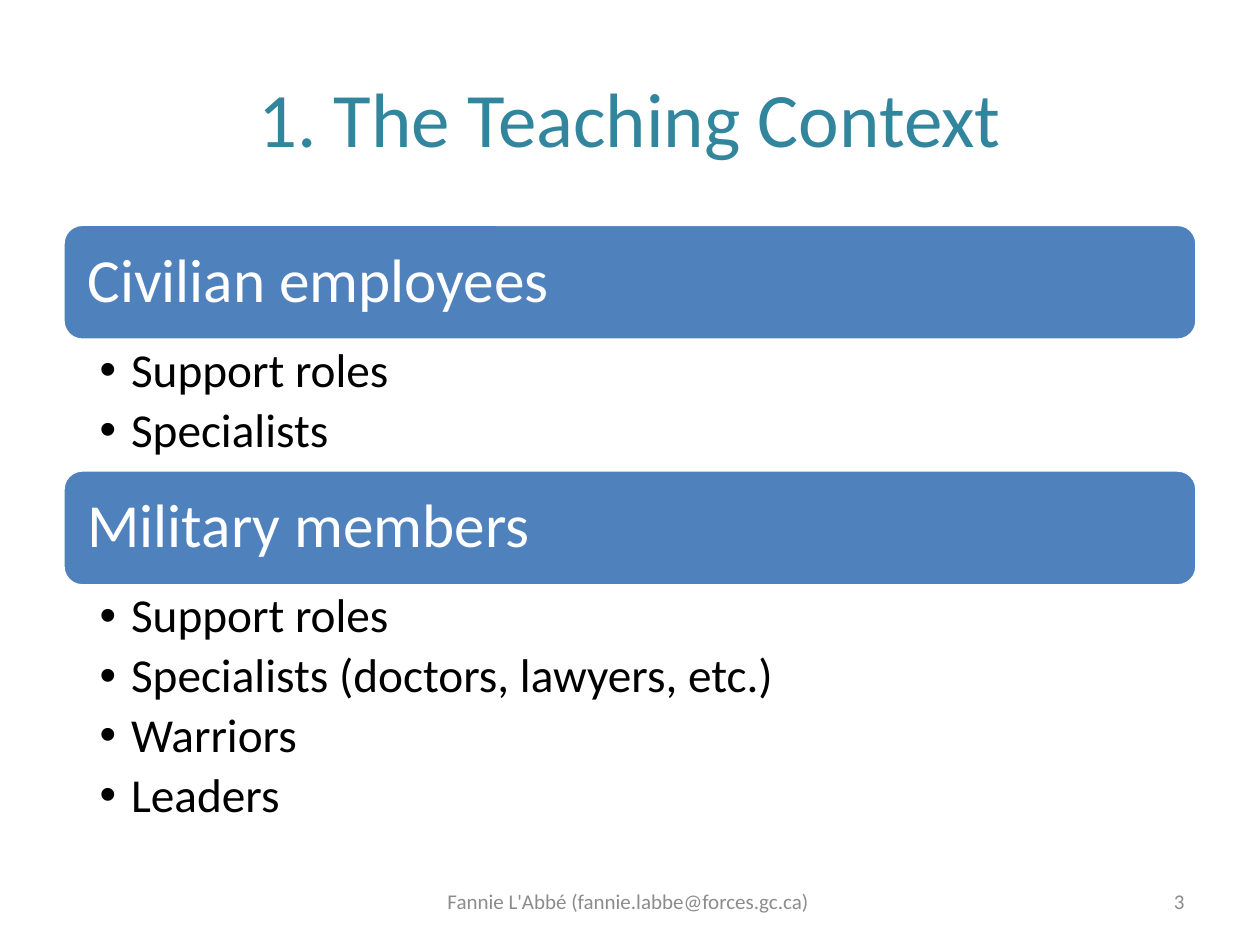
"""Build the teaching context slide with two headed bullet lists."""
from dataclasses import dataclass

from lxml.etree import SubElement
from pptx import Presentation
from pptx.dml.color import RGBColor
from pptx.enum.shapes import MSO_SHAPE
from pptx.enum.text import MSO_ANCHOR, PP_ALIGN
from pptx.oxml.ns import qn
from pptx.util import Inches, Pt

LEFT, WIDTH = 0.5, 9
BAR_HEIGHT = 0.92


@dataclass
class Section:
    heading: str
    items: list[str]
    top: float
    list_height: float


@dataclass
class FooterText:
    text: str
    left: float
    width: float
    alignment: PP_ALIGN


SECTIONS = [
    Section("Civilian employees", ["Support roles", "Specialists"], 1.78, 1.03),
    Section(
        "Military members",
        ["Support roles", "Specialists (doctors, lawyers, etc.)", "Warriors", "Leaders"],
        3.73,
        2.02,
    ),
]
FOOTERS = [
    FooterText("3", 7.17, 2.33, PP_ALIGN.RIGHT),
    FooterText("Fannie L'Abbé (fannie.labbe@forces.gc.ca) ", 3.42, 3.17, PP_ALIGN.CENTER),
]


def color(value: str) -> RGBColor:
    return RGBColor.from_string(value)


def format_paragraph(paragraph, size: float, font_color: str, alignment: PP_ALIGN) -> None:
    paragraph.alignment = alignment
    paragraph.font.name = "Calibri"
    paragraph.font.size = Pt(size)
    paragraph.font.color.rgb = color(font_color)


def set_insets(frame, left: float, right: float, vertical: float) -> None:
    frame.margin_left, frame.margin_right = Inches(left), Inches(right)
    frame.margin_top = frame.margin_bottom = Inches(vertical)


def add_bullet(paragraph) -> None:
    properties = paragraph._p.get_or_add_pPr()
    properties.set("marL", str(Inches(0.25)))
    properties.set("indent", str(-Inches(0.25)))
    SubElement(properties, qn("a:buFont"), typeface="Arial")
    SubElement(properties, qn("a:buChar"), char="•")


def add_heading_bar(slide, section: Section) -> None:
    bar = slide.shapes.add_shape(
        MSO_SHAPE.ROUNDED_RECTANGLE,
        Inches(LEFT), Inches(section.top), Inches(WIDTH), Inches(BAR_HEIGHT),
    )
    bar.shadow.inherit = False
    bar.fill.solid()
    bar.fill.fore_color.rgb = color("4F81BD")
    bar.line.color.rgb = color("FFFFFF")
    bar.line.width = Pt(2)
    frame = bar.text_frame
    frame.vertical_anchor = MSO_ANCHOR.MIDDLE
    set_insets(frame, 0.15, 0.15, 0.15)
    paragraph = frame.paragraphs[0]
    paragraph.text = section.heading
    paragraph.line_spacing = 0.9
    format_paragraph(paragraph, 35, "FFFFFF", PP_ALIGN.LEFT)


def add_list(slide, section: Section) -> None:
    box = slide.shapes.add_textbox(
        Inches(LEFT), Inches(section.top + BAR_HEIGHT),
        Inches(WIDTH), Inches(section.list_height),
    )
    frame = box.text_frame
    frame.word_wrap = True
    set_insets(frame, 0.29, 0.27, 0.05)
    for index, item in enumerate(section.items):
        paragraph = frame.add_paragraph() if index else frame.paragraphs[0]
        paragraph.text = item
        paragraph.level = 1
        paragraph.line_spacing = 0.9
        paragraph.space_after = Pt(5)
        format_paragraph(paragraph, 27, "000000", PP_ALIGN.LEFT)
        add_bullet(paragraph)


def add_footer(slide, footer: FooterText) -> None:
    box = slide.shapes.add_textbox(
        Inches(footer.left), Inches(6.95), Inches(footer.width), Inches(0.4)
    )
    frame = box.text_frame
    frame.word_wrap = True
    frame.vertical_anchor = MSO_ANCHOR.MIDDLE
    paragraph = frame.paragraphs[0]
    paragraph.text = footer.text
    format_paragraph(paragraph, 12, "8C8C8C", footer.alignment)


def add_title(slide, text: str) -> None:
    title = slide.shapes.title
    title.left, title.top = Inches(LEFT), Inches(0.3)
    title.width, title.height = Inches(WIDTH), Inches(1.25)
    title.text_frame.vertical_anchor = MSO_ANCHOR.MIDDLE
    paragraph = title.text_frame.paragraphs[0]
    paragraph.text = text
    format_paragraph(paragraph, 44, "31859C", PP_ALIGN.CENTER)


def main() -> None:
    presentation = Presentation()
    presentation.slide_width, presentation.slide_height = Inches(10), Inches(7.5)
    slide = presentation.slides.add_slide(presentation.slide_layouts.get_by_name("Title Only"))
    add_title(slide, "1. The Teaching Context")
    for section in SECTIONS:
        add_heading_bar(slide, section)
        add_list(slide, section)
    for footer in FOOTERS:
        add_footer(slide, footer)
    presentation.save("out.pptx")


if __name__ == "__main__":
    main()
